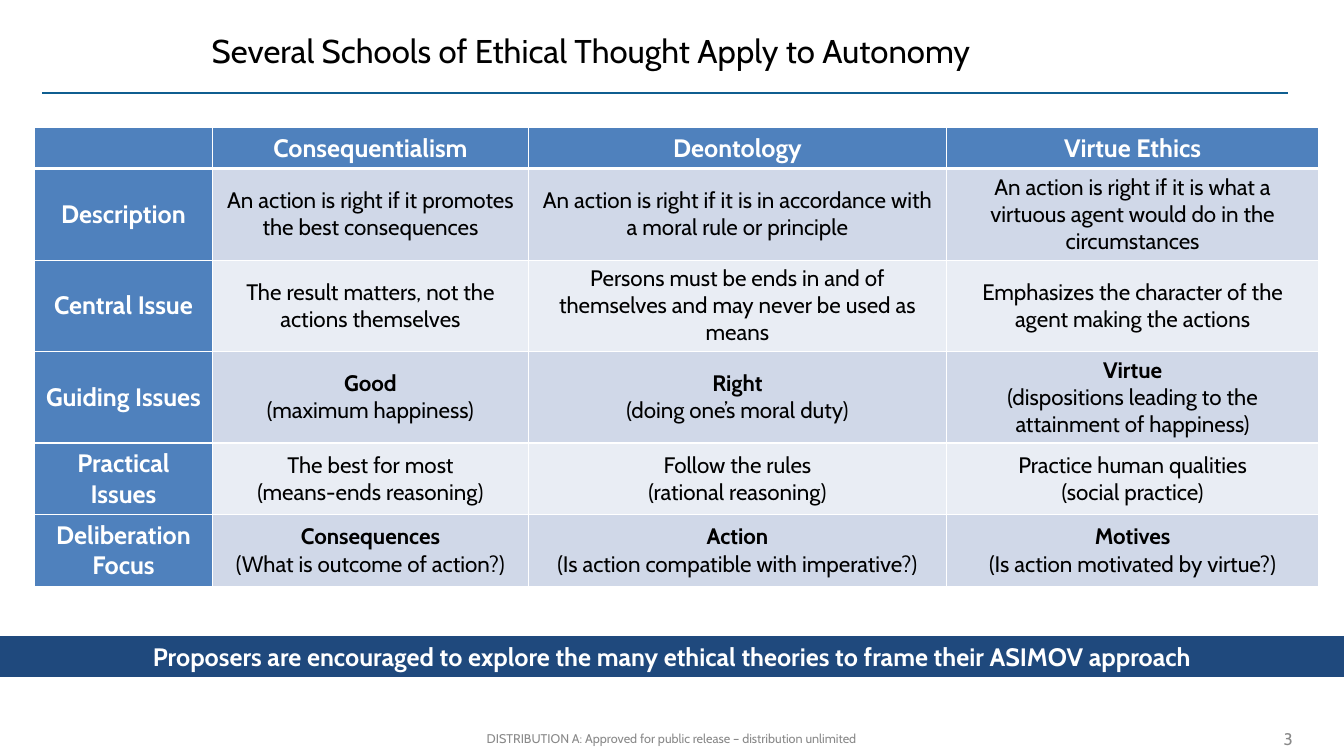
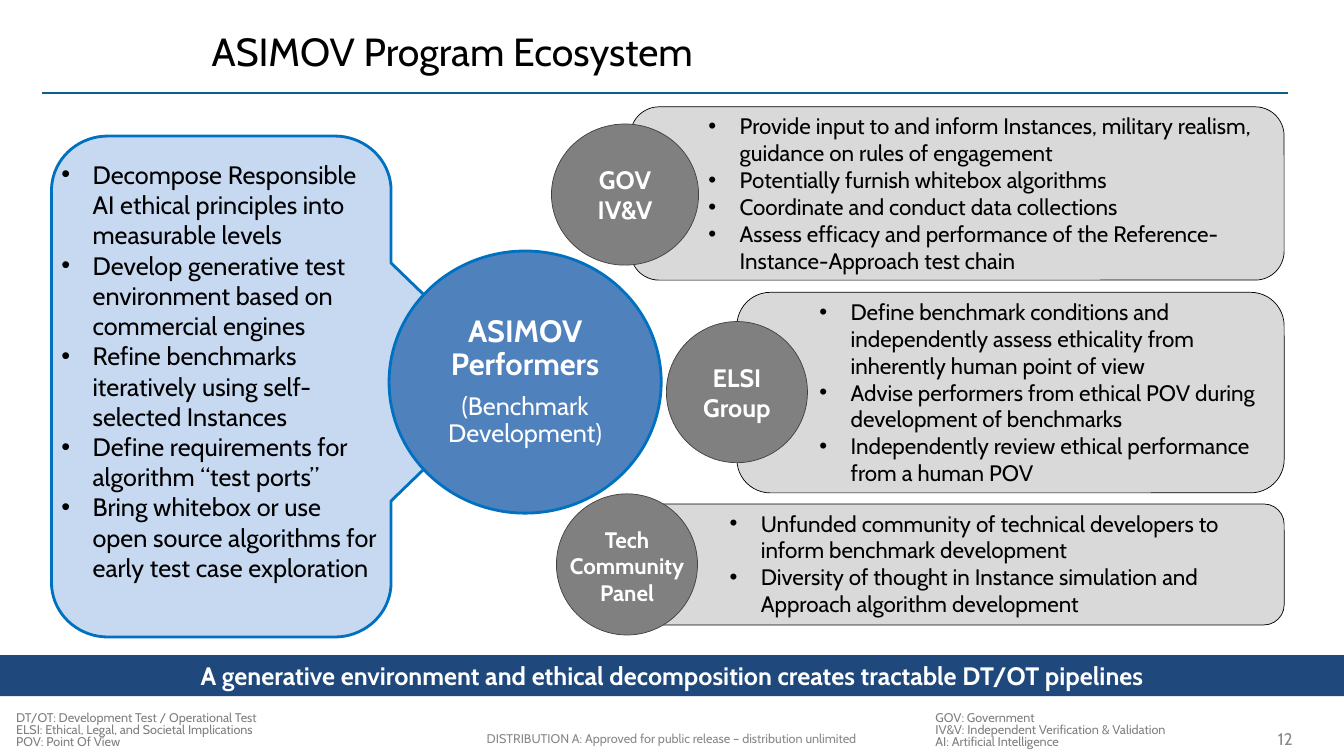
from dataclasses import dataclass
import math
from lxml import etree
from pptx import Presentation
from pptx import util as u
from pptx.dml.color import RGBColor
from pptx.enum import shapes, text
from pptx.oxml.ns import qn


@dataclass(frozen=True)
class Theme:
    face: str = "Cabin"
    black: str = "000000"
    white: str = "FFFFFF"
    rule: str = "0F5E90"
    blue: str = "4F81BD"
    edge: str = "0070C0"
    navy: str = "1F497D"
    sky: str = "C6D9F1"
    odd: str = "D0D8E8"
    even: str = "E9EDF4"
    panel: str = "D9D9D9"
    disc: str = "808080"
    rim: str = "404040"
    mute: str = "898989"
    title: float = 28
    lead: float = 22
    head: float = 18
    body: float = 16
    page: float = 12
    note: float = 9


T = Theme()
LEFT, MID = text.PP_ALIGN.LEFT, text.PP_ALIGN.CENTER
RIGHT = text.PP_ALIGN.RIGHT
TOP, CORE = text.MSO_ANCHOR.TOP, text.MSO_ANCHOR.MIDDLE
FORM = shapes.MSO_SHAPE
WIDE, HIGH = u.Inches(13.33), u.Inches(7.5)


def tint(hue):
    return RGBColor.from_string(hue)


def across(share):
    return round(WIDE * share / 100)


def down(share):
    return round(HIGH * share / 100)


def place(x, y, w, h):
    return across(x), down(y), across(w), down(h)


class Deck:
    def __init__(self):
        self.file = Presentation()
        self.file.slide_width, self.file.slide_height = WIDE, HIGH
        self.slide = None

    def start(self, title, number, size=T.title):
        self.slide = self.file.slides.add_slide(self.file.slide_layouts[5])
        self.rule(3.15, 95.85, 12.3)
        head = self.slide.shapes.title
        head.left, head.top, head.width, head.height = place(15, 2.2, 80.85, 9)
        self.words(head.text_frame, [title], size, anchor=CORE)
        self.label((14.55, 95.5, 70.8, 4.4),
                   ["DISTRIBUTION A: Approved for public release – distribution unlimited"],
                   T.note, T.mute, align=MID, anchor=CORE)
        self.label((88.6, 95.6, 8.33, 4.3), [number], T.page, T.mute,
                   align=RIGHT, anchor=CORE)

    def rule(self, x, end, y):
        line = self.slide.shapes.add_connector(
            shapes.MSO_CONNECTOR.STRAIGHT, across(x), down(y), across(end), down(y))
        line.line.color.rgb = tint(T.rule)
        line.line.width = u.Pt(1.75)
        etree.SubElement(line._element.spPr, qn("a:effectLst"))

    def style(self, par, size, hue, bold=False, align=LEFT):
        par.alignment = align
        par.font.name, par.font.size, par.font.bold = T.face, u.Pt(size), bold
        par.font.color.rgb = tint(hue)

    def words(self, frame, lines, size, hue=T.black, bold=False, align=LEFT,
              anchor=TOP, inset=None, dots=False, pitch=None):
        frame.word_wrap = True
        frame.auto_size = text.MSO_AUTO_SIZE.NONE
        frame.vertical_anchor = anchor
        if inset is not None:
            (frame.margin_left, frame.margin_top,
             frame.margin_right, frame.margin_bottom) = map(u.Inches, inset)
        for i, line in enumerate(lines):
            par = frame.add_paragraph() if i else frame.paragraphs[0]
            par.text = line
            if pitch:
                par.line_spacing = pitch
            if dots:
                self.dot(par)
            self.style(par, size, hue, bold, align)

    def dot(self, par):
        prop = par._p.get_or_add_pPr()
        prop.set("marL", str(u.Inches(0.31)))
        prop.set("indent", str(-u.Inches(0.31)))
        etree.SubElement(prop, qn("a:buFont")).set("typeface", "Arial")
        etree.SubElement(prop, qn("a:buChar")).set("char", "•")

    def label(self, box, lines, size, hue=T.black, **look):
        area = self.slide.shapes.add_textbox(*place(*box))
        self.words(area.text_frame, lines, size, hue, **look)

    def paint(self, shape, fill, edge=None, width=0.5):
        shape.shadow.inherit = False
        shape.fill.solid()
        shape.fill.fore_color.rgb = tint(fill)
        if edge:
            shape.line.color.rgb = tint(edge)
            shape.line.width = u.Pt(width)
        else:
            shape.line.fill.background()

    def shape(self, kind, box, fill, edge=None, width=0.5):
        item = self.slide.shapes.add_shape(kind, *place(*box))
        self.paint(item, fill, edge, width)
        return item

    def band(self, y, line):
        bar = self.shape(FORM.RECTANGLE, (0, y, 100, 5.4), T.navy)
        self.words(bar.text_frame, [line], T.head, T.white, True, MID, CORE)

    def bubble(self, box, radius, tail):
        x, y, w, h = box
        rx, ry = radius
        tip, upper, lower, near, far = tail
        right, base = x + w, y + h

        def bend(cx, cy, start):
            turns = [math.radians(start + step * 5) for step in range(19)]
            return [(cx + rx * math.cos(a), cy + ry * math.sin(a)) for a in turns]

        dots = (bend(x + rx, y + ry, 180) + bend(right - rx, y + ry, 270)
                + [(right, upper), (tip, near), (tip, far), (right, lower)]
                + bend(right - rx, base - ry, 0) + bend(x + rx, base - ry, 90))
        spots = [(across(a), down(b)) for a, b in dots]
        shell = self.slide.shapes.build_freeform(*spots[0])
        shell.add_line_segments(spots[1:], close=True)
        self.paint(shell.convert_to_shape(), T.sky, T.edge, 2)

    def hub(self, box, name, role):
        ball = self.shape(FORM.OVAL, box, T.blue, T.edge, 2)
        frame = ball.text_frame
        self.words(frame, [name, role], T.lead, T.white, True, MID, CORE,
                   (0.1,) * 4, pitch=0.9)
        for par, gap in zip(frame.paragraphs, (8, 6)):
            par.space_after = u.Pt(gap)
        self.style(frame.paragraphs[1], T.head, T.white, align=MID)

    def card(self, x, y, h, disc, inner, name, lines, plate=None):
        end = 95.55
        self.shape(FORM.ROUNDED_RECTANGLE, (x, y, end - x, h), T.panel, T.black)
        ball = self.shape(FORM.OVAL, disc, T.disc, T.rim)
        look = dict(bold=True, align=MID, anchor=CORE)
        if plate:
            self.label(plate, [name], T.body, T.white, **look)
        else:
            self.words(ball.text_frame, [name], T.head, T.white,
                       inset=(0,) * 4, **look)
        self.label((inner, y + 0.1, end - inner, h), lines, T.body, dots=True)

    def border(self, cell, row):
        prop = cell._tc.get_or_add_tcPr()
        thick = {"lnT": 3 if row == 1 else 1, "lnB": 3 if row == 0 else 1}
        for side in ("lnL", "lnR", "lnT", "lnB"):
            line = etree.SubElement(prop, qn("a:" + side))
            line.set("w", str(u.Pt(thick.get(side, 1))))
            fill = etree.SubElement(line, qn("a:solidFill"))
            etree.SubElement(fill, qn("a:srgbClr")).set("val", T.white)

    def table(self, x, y, cols, rows, data):
        grid = self.slide.shapes.add_table(
            len(rows), len(cols), *place(x, y, sum(cols), sum(rows))).table
        grid.first_row = grid.horz_banding = False
        for col, w in zip(grid.columns, cols):
            col.width = across(w)
        for row, h in zip(grid.rows, rows):
            row.height = down(h)
        for r, line in enumerate(data):
            for c, words in enumerate(line):
                self.cell(grid.cell(r, c), r, c, words)

    def cell(self, cell, r, c, words):
        self.border(cell, r)
        head = r == 0 or c == 0
        cell.fill.solid()
        cell.fill.fore_color.rgb = tint(T.blue if head else T.odd if r % 2 else T.even)
        cell.vertical_anchor = CORE if r else TOP
        cell.text = words.replace("*", "")
        for par, line in zip(cell.text_frame.paragraphs, words.split("\n")):
            self.style(par, T.head if head else T.body,
                       T.white if head else T.black,
                       head or line.startswith("*"), MID)


SCHOOLS = [
    ["", "Consequentialism", "Deontology", "Virtue Ethics"],
    ["Description", "An action is right if it promotes the best consequences",
     "An action is right if it is in accordance with a moral rule or principle",
     "An action is right if it is what a virtuous agent would do in the circumstances"],
    ["Central Issue", "The result matters, not the actions themselves",
     "Persons must be ends in and of themselves and may never be used as means",
     "Emphasizes the character of the agent making the actions"],
    ["Guiding Issues", "*Good\n(maximum happiness)",
     "*Right\n(doing one’s moral duty)",
     "*Virtue\n(dispositions leading to the attainment of happiness)"],
    ["Practical Issues", "The best for most\n(means-ends reasoning)",
     "Follow the rules\n(rational reasoning)",
     "Practice human qualities\n(social practice)"],
    ["Deliberation Focus", "*Consequences\n(What is outcome of action?)",
     "*Action\n(Is action compatible with imperative?)",
     "*Motives\n(Is action motivated by virtue?)"],
]
TASKS = [
    "Decompose Responsible AI ethical principles into measurable levels",
    "Develop generative test environment based on commercial engines",
    "Refine benchmarks iteratively using self-selected Instances",
    "Define requirements for algorithm “test ports”",
    "Bring whitebox or use open source algorithms for early test case exploration",
]
CARDS = [
    (46.9, 14.13, 22.93, (41.03, 16.4, 10.95, 18.67), 51.98, "GOV IV&V", [
        "Provide input to and inform Instances, military realism, guidance on rules of engagement",
        "Potentially furnish whitebox algorithms",
        "Coordinate and conduct data collections",
        "Assess efficacy and performance of the Reference-Instance-Approach test chain"]),
    (54.83, 38.67, 26.53, (49.58, 42.53, 10.5, 18.67), 60.23, "ELSI Group", [
        "Define benchmark conditions and independently assess ethicality from inherently human point of view",
        "Advise performers from ethical POV during development of benchmarks",
        "Independently review ethical performance from a human POV"]),
    (47.03, 66.67, 16, (41.4, 65.33, 10.5, 18.67), 53.55, "Tech Community Panel", [
        "Unfunded community of technical developers to inform benchmark development",
        "Diversity of thought in Instance simulation and Approach algorithm development"],
        (41.03, 68.8, 11.25, 12.13)),
]
TERMS = [
    (0, ["DT/OT: Development Test / Operational Test",
         "ELSI: Ethical, Legal, and Societal Implications",
         "POV: Point Of View"]),
    (68.4, ["GOV: Government",
            "IV&V: Independent Verification & Validation",
            "AI: Artificial Intelligence"]),
]


def main():
    deck = Deck()
    deck.start("Several Schools of Ethical Thought Apply to Autonomy", "3", 23.5)
    deck.table(2.55, 16.9, [13.28, 23.48, 31.13, 27.68],
               [5.33, 12.1, 12.1, 12.1, 9.45, 9.45], SCHOOLS)
    deck.band(84.13, "Proposers are encouraged to explore the many ethical theories "
                     "to frame their ASIMOV approach")

    deck.start("ASIMOV Program Ecosystem", "12")
    deck.bubble((3.83, 18, 25.27, 66.27), (4.2, 7.2),
                (33.83, 34.8, 66.27, 42.93, 58.13))
    deck.hub((28.95, 33.2, 20.25, 34.67), "ASIMOV Performers",
             "(Benchmark Development)")
    deck.label((3.83, 20.4, 25.1, 61.9), TASKS, T.head, dots=True)
    for card in CARDS:
        deck.card(*card)
    deck.band(86.67, "A generative environment and ethical decomposition creates "
                     "tractable DT/OT pipelines")
    for x, lines in TERMS:
        deck.label((x, 94.27, 28.58, 4.93), lines, T.note, T.disc,
                   inset=(0.16, 0, 0.1, 0), pitch=0.8)
    deck.file.save("out.pptx")


if __name__ == "__main__":
    main()
